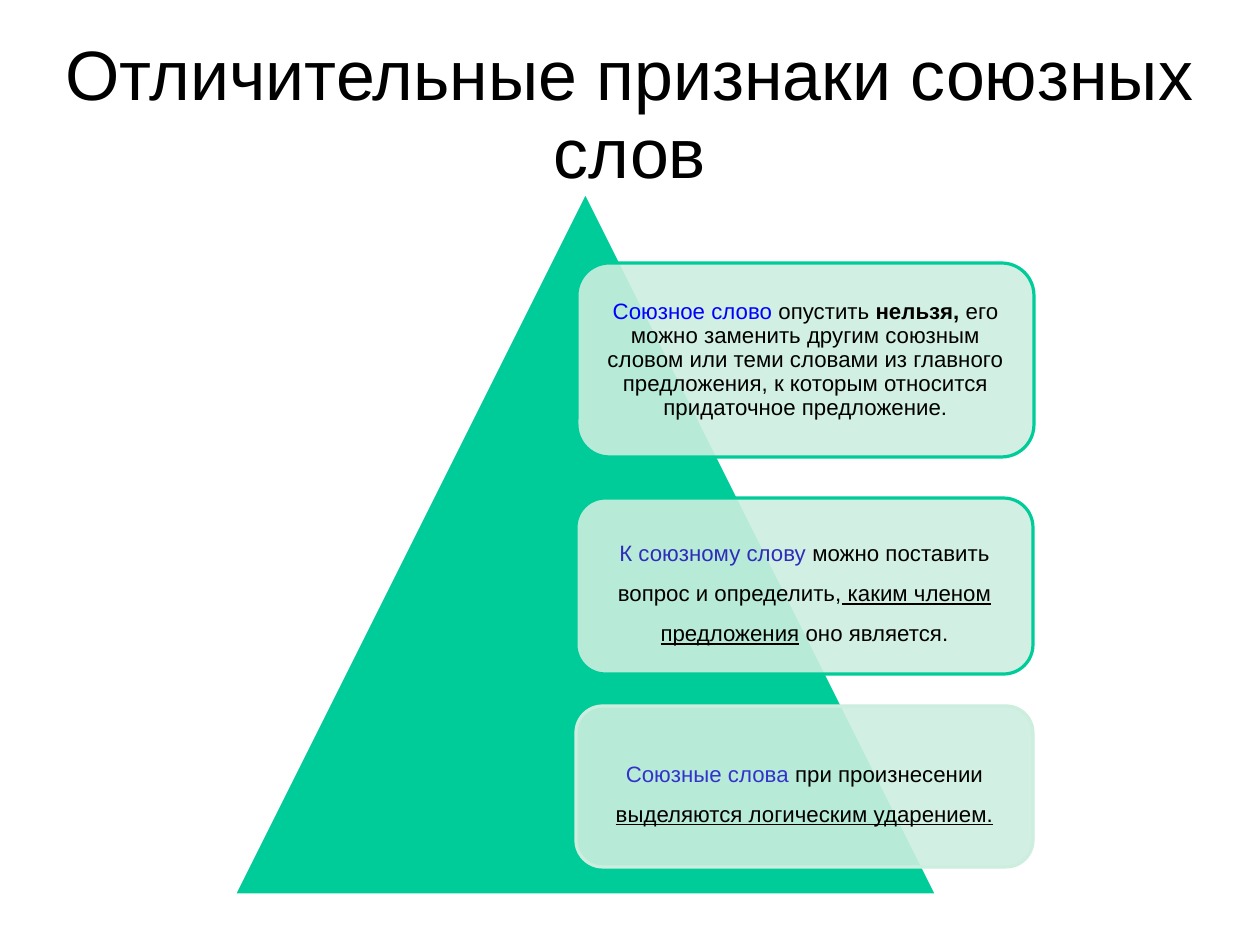
from lxml.etree import SubElement
from pptx import Presentation
from pptx.dml.color import RGBColor
from pptx.enum.shapes import MSO_SHAPE
from pptx.enum.text import MSO_ANCHOR, MSO_AUTO_SIZE, PP_ALIGN
from pptx.oxml.ns import qn
from pptx.util import Emu, Pt

SCALE = 8000
BLACK = "000000"
GREEN = "00CC99"
MINT = "CCEEDF"

CARDS = [
    ((577, 263, 457, 194), GREEN, 0.9, [
        ("Союзное слово", "0000FF", ""),
        (" опустить ", BLACK, ""),
        ("нельзя, ", BLACK, "bold"),
        ("его можно заменить другим союзным словом или теми словами из главного "
         "предложения, к которым относится придаточное предложение.", BLACK, ""),
    ]),
    ((576, 498, 457, 176), GREEN, 1.5, [
        ("К союзному слову ", "2D2DB9", ""),
        ("можно поставить вопрос и определить,", BLACK, ""),
        (" каким членом предложения", BLACK, "underline"),
        (" оно является.", BLACK, ""),
    ]),
    ((576, 706, 457, 161), MINT, 1.5, [
        ("Союзные слова", "3333CC", ""),
        (" при произнесении ", BLACK, ""),
        ("выделяются логическим ударением.", BLACK, "underline"),
    ]),
]


def px(length):
    """Convert pixels to EMU."""
    return Emu(length * SCALE)


def color(value):
    """Turn a hex string into a colour."""
    return RGBColor.from_string(value)


def write_text(shape, runs, size, line_spacing, inset):
    """Write one centred paragraph into a shape, run by run."""
    frame = shape.text_frame
    frame.word_wrap = True
    frame.auto_size = MSO_AUTO_SIZE.NONE
    frame.vertical_anchor = MSO_ANCHOR.MIDDLE
    frame.margin_left = frame.margin_right = px(inset)
    frame.margin_top = frame.margin_bottom = px(inset)
    paragraph = frame.paragraphs[0]
    paragraph.alignment = PP_ALIGN.CENTER
    paragraph.line_spacing = line_spacing
    for text, text_color, style in runs:
        run = paragraph.add_run()
        run.text = text
        run.font.name = "Arial"
        run.font.size = Pt(size)
        run.font.color.rgb = color(text_color)
        run.font.bold = style == "bold"
        run.font.underline = style == "underline"
    return paragraph


def add_title(slide, box, text):
    """Place and fill the title placeholder."""
    title = slide.shapes.title
    title.left, title.top, title.width, title.height = map(px, box)
    write_text(title, [(text, BLACK, "")], 44, 0.93, 0)


def add_figure(slide, kind, box, fill, line):
    """Add a preset shape with a solid fill and a two-point outline."""
    shape = slide.shapes.add_shape(kind, *map(px, box))
    shape.shadow.inherit = False
    shape.fill.solid()
    shape.fill.fore_color.rgb = color(fill)
    shape.line.color.rgb = color(line)
    shape.line.width = Pt(2)
    return shape


def set_opacity(shape, percent):
    """Make the solid fill of a shape partly transparent."""
    fill_color = shape.fill._xPr.find(qn("a:solidFill"))[0]
    SubElement(fill_color, qn("a:alpha"), val=str(percent * 1000))


def add_card(slide, box, line, line_spacing, runs):
    """Add a translucent rounded card with its text."""
    card = add_figure(slide, MSO_SHAPE.ROUNDED_RECTANGLE, box, MINT, line)
    set_opacity(card, 90)
    paragraph = write_text(card, runs, 14, line_spacing, 7)
    paragraph.space_after = Pt(5)


def main():
    """Build and save the slide."""
    presentation = Presentation()
    presentation.slide_width = px(1260)
    presentation.slide_height = px(945)
    slide = presentation.slides.add_slide(presentation.slide_layouts[5])
    add_title(slide, (63, 37, 1134, 158), "Отличительные признаки союзных слов")
    add_figure(slide, MSO_SHAPE.ISOSCELES_TRIANGLE, (234, 192, 703, 703), GREEN, "FFFFFF")
    for card in CARDS:
        add_card(slide, *card)
    presentation.save("out.pptx")


if __name__ == "__main__":
    main()
